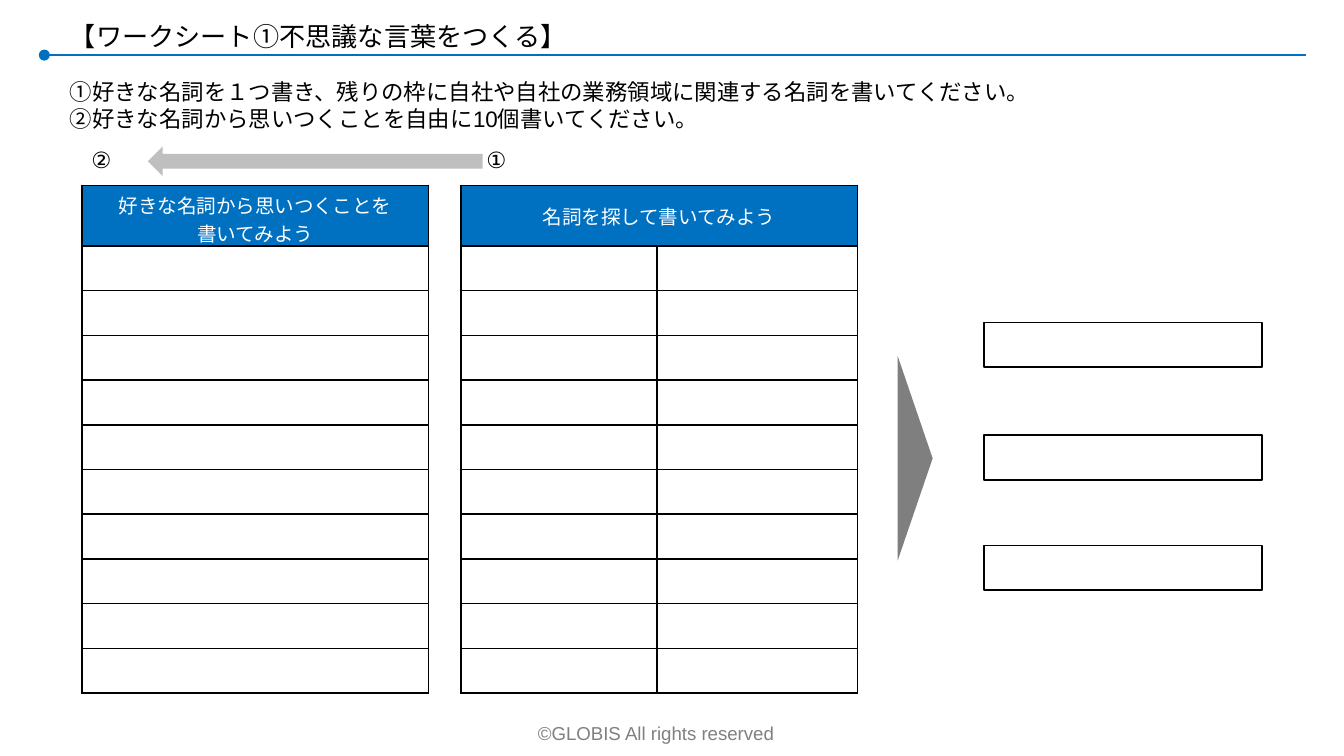
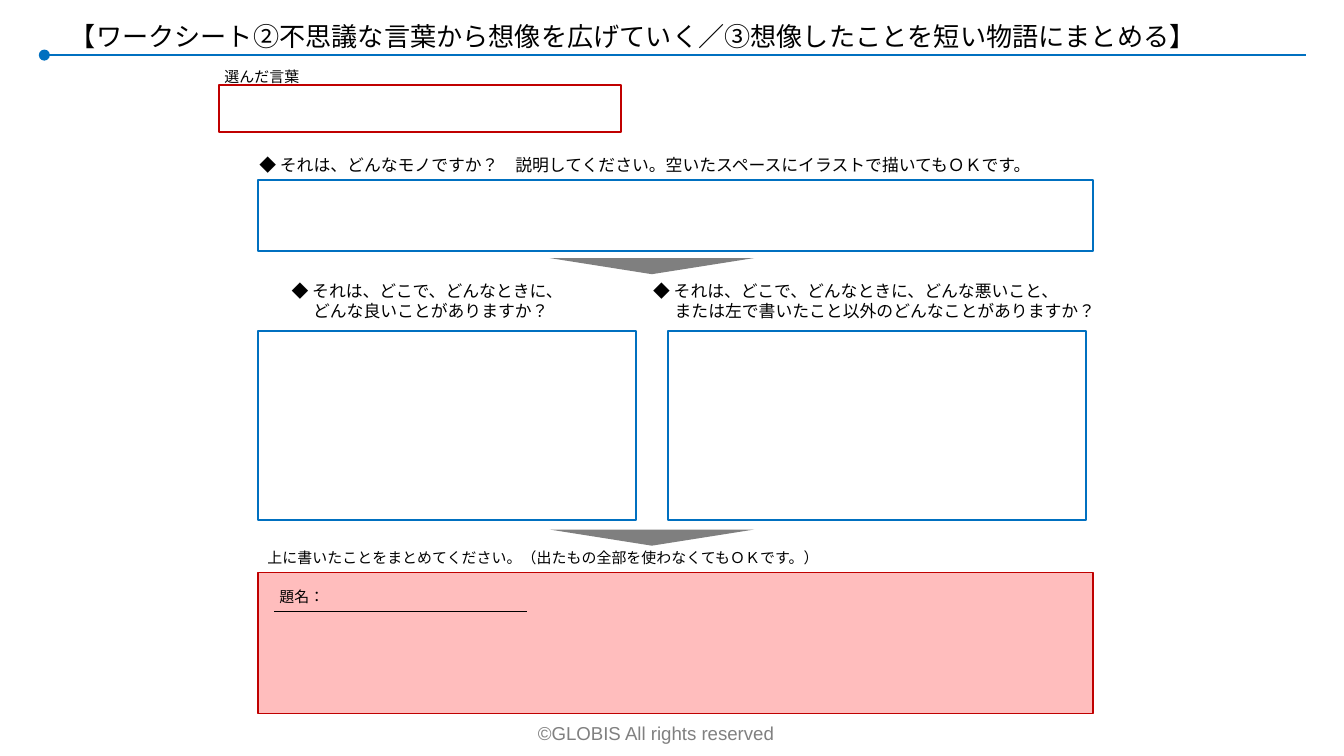
from dataclasses import dataclass

from lxml.etree import SubElement
from pptx import Presentation
from pptx.dml.color import RGBColor as Rgb
from pptx.enum.lang import MSO_LANGUAGE_ID as Language
from pptx.enum.shapes import MSO_CONNECTOR as Link, MSO_SHAPE as Preset
from pptx.enum.text import MSO_ANCHOR as Anchor, MSO_AUTO_SIZE as Fit, PP_ALIGN as Align
from pptx.oxml.ns import qn
from pptx.util import Pt


@dataclass(frozen=True)
class Theme:
    font: str = "Arial"
    black: str = "000000"
    white: str = "FFFFFF"
    blue: str = "0070C0"
    red: str = "C00000"
    pink: str = "FFBDBD"
    dark_gray: str = "7F7F7F"
    light_gray: str = "BFBFBF"
    footer_gray: str = "808080"
    title: float = 14
    body: float = 12
    cell: float = 10.5
    footer: float = 10
    question: float = 9
    caption: float = 8


theme = Theme()
PX = 9144


def write(frame, text, size, color=theme.black, align=Align.LEFT):
    frame.text = text
    for paragraph in frame.paragraphs:
        paragraph.alignment = align
        for run in paragraph.runs:
            run.font.size = Pt(size)
            run.font.name = theme.font
            run.font.language_id = Language.JAPANESE
            run.font.color.rgb = Rgb.from_string(color)


def draw(slide, preset, left, top, width, height, fill=None, line=None):
    shape = slide.shapes.add_shape(preset, left * PX, top * PX, width * PX, height * PX)
    shape.shadow.inherit = False
    if fill:
        shape.fill.solid()
        shape.fill.fore_color.rgb = Rgb.from_string(fill)
    else:
        shape.fill.background()
    if line:
        shape.line.color.rgb = Rgb.from_string(line)
        shape.line.width = Pt(1)
    else:
        shape.line.fill.background()
    return shape


prs = Presentation()
prs.slide_width = 1000 * PX
prs.slide_height = prs.slide_width * 9 // 16

slides = []
for heading in (
    "【ワークシート①不思議な言葉をつくる】",
    "【ワークシート②不思議な言葉から想像を広げていく／③想像したことを短い物語にまとめる】",
):
    slide = prs.slides.add_slide(prs.slide_layouts[5])
    slides.append(slide)
    title = slide.shapes.title
    title.left, title.top, title.width, title.height = 45 * PX, 11 * PX, 883 * PX, 30 * PX
    frame = title.text_frame
    frame.auto_size = Fit.NONE
    frame.vertical_anchor = Anchor.TOP
    frame.margin_left = frame.margin_right = 7 * PX
    frame.margin_top = frame.margin_bottom = 4 * PX
    write(frame, heading, theme.title)

    footer = slide.shapes.add_textbox(339 * PX, 532 * PX, 298 * PX, 27 * PX)
    footer.text_frame.word_wrap = True
    write(footer.text_frame, "©GLOBIS All rights reserved", theme.footer, theme.footer_gray, Align.CENTER)

words, story = slides

table = words.shapes.add_table(11, 4, 61 * PX, 138 * PX, 576 * PX, 378 * PX).table
table.first_row = table.horz_banding = False
for column, width in zip(table.columns, (258, 23, 146, 149)):
    column.width = width * PX
table.rows[0].height = 45 * PX
for number, row in enumerate(table.rows):
    if number:
        row.height = (378 - 45) * PX // 10
    for position, cell in enumerate(row.cells):
        is_gap = position == 1
        cell.margin_top = 4 * PX
        cell.margin_bottom = 4 * PX if position else 0
        properties = cell._tc.get_or_add_tcPr()
        for side in ("lnL", "lnR", "lnT", "lnB"):
            border = SubElement(properties, qn(f"a:{side}"), w=str(Pt(1)))
            if is_gap and side in ("lnT", "lnB"):
                SubElement(border, qn("a:noFill"))
            else:
                ink = SubElement(border, qn("a:solidFill"))
                SubElement(ink, qn("a:srgbClr"), val=theme.black)
        if is_gap:
            cell.fill.background()
        else:
            cell.fill.solid()
            cell.fill.fore_color.rgb = Rgb.from_string(theme.white if number else theme.blue)
        SubElement(cell.text_frame.paragraphs[0]._p, qn("a:endParaRPr"), sz=str(int(theme.cell * 100)))
table.cell(0, 2).merge(table.cell(0, 3))
table.cell(0, 2).vertical_anchor = Anchor.MIDDLE
for position, header in ((0, "好きな名詞から思いつくことを\n書いてみよう"), (2, "名詞を探して書いてみよう")):
    write(table.cell(0, position).text_frame, header, theme.cell, theme.white, Align.CENTER)

for top in (240, 324, 406):
    draw(words, Preset.RECTANGLE, 732, top, 207, 33, theme.white, theme.black)

for left, top, width, height, fill, line in (
    (192, 426, 621, 105, theme.pink, theme.red),
    (192, 134, 621, 53, None, theme.blue),
    (192, 246, 281, 141, None, theme.blue),
    (497, 246, 311, 141, None, theme.blue),
    (163, 63, 299, 35, None, theme.red),
):
    draw(story, Preset.RECTANGLE, left, top, width, height, fill, line)

for slide, left, top, width, height, turn in (
    (words, 605, 328, 152, 26, 270),
    (story, 409, 192, 152, 12, 0),
    (story, 409, 394, 152, 12, 0),
):
    pointer = draw(slide, Preset.DOWN_ARROW, left, top, width, height, theme.dark_gray)
    pointer.adjustments[0], pointer.adjustments[1] = 0.5, 1
    pointer.rotation = turn
backward = draw(words, Preset.RIGHT_ARROW, 110, 109, 249, 22, theme.light_gray)
backward.rotation = 180

for slide, left, top, width, height, text, size in (
    (words, 45, 54, 900, 48,
     "①好きな名詞を１つ書き、残りの枠に自社や自社の業務領域に関連する名詞を書いてください。\n"
     "②好きな名詞から思いつくことを自由に10個書いてください。", theme.body),
    (words, 61, 105, 576, 28, "②\t①", theme.body),
    (story, 186, 111, 650, 23,
     "◆ それは、どんなモノですか？　説明してください。空いたスペースにイラストで描いてもＯＫです。", theme.question),
    (story, 210, 205, 316, 38,
     "◆ それは、どこで、どんなときに、\nどんな良いことがありますか？", theme.question),
    (story, 479, 205, 387, 38,
     "◆ それは、どこで、どんなときに、どんな悪いこと、\nまたは左で書いたこと以外のどんなことがありますか？", theme.question),
    (story, 192, 404, 650, 21,
     "上に書いたことをまとめてください。（出たもの全部を使わなくてもＯＫです。）", theme.caption),
    (story, 201, 433, 237, 21, "題名：", theme.caption),
    (story, 160, 46, 650, 21, "選んだ言葉", theme.caption),
):
    frame = slide.shapes.add_textbox(left * PX, top * PX, width * PX, height * PX).text_frame
    frame.word_wrap = True
    frame.margin_left = frame.margin_right = 7 * PX
    frame.margin_top = frame.margin_bottom = 4 * PX
    write(frame, text, size)
    if size == theme.question:
        for continuation in frame.paragraphs[1:]:
            continuation._p.get_or_add_pPr().set("marL", str(16 * PX))
    if "\t" in text:
        tabs = SubElement(frame.paragraphs[0]._p.get_or_add_pPr(), qn("a:tabLst"))
        SubElement(tabs, qn("a:tab"), pos=str(294 * PX), algn="l")

for slide, start, end, height, color, weight in (
    (words, 33, 972, 41, theme.blue, 1.5),
    (story, 33, 972, 41, theme.blue, 1.5),
    (story, 204, 392, 455, theme.black, 0.75),
):
    rule = slide.shapes.add_connector(Link.STRAIGHT, start * PX, height * PX, end * PX, height * PX)
    rule.line.color.rgb = Rgb.from_string(color)
    rule.line.width = Pt(weight)
    if color == theme.blue:
        SubElement(rule.line._get_or_add_ln(), qn("a:headEnd"), type="oval")
    SubElement(rule._element.spPr, qn("a:effectLst"))

prs.save("out.pptx")
